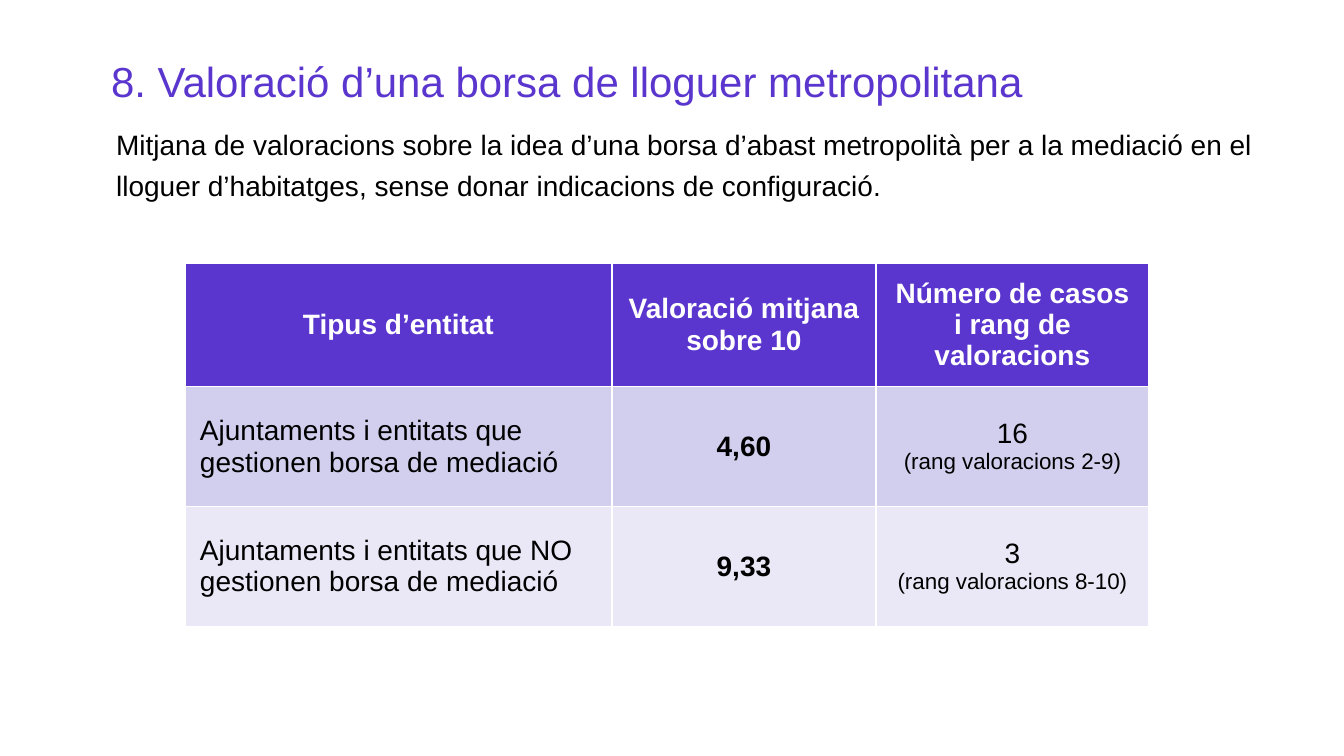
from pptx import Presentation
from pptx.dml.color import RGBColor
from pptx.enum.text import MSO_ANCHOR, MSO_AUTO_SIZE, PP_ALIGN
from pptx.oxml.ns import qn
from pptx.util import Pt

PX = 914400 / 100.8
COLORS = {"purple": "5A36CE", "lilac": "D2CEED", "pale": "EAE8F6",
          "white": "FFFFFF", "black": "000000"}


def px(length):
    return round(length * PX)


def add_text(paragraph, text, size, color, bold=False):
    run = paragraph.add_run()
    run.text = text
    run.font.name = "Arial"
    run.font.size = Pt(size)
    run.font.bold = bold
    run.font.color.rgb = RGBColor.from_string(COLORS[color])


prs = Presentation()
prs.slide_width, prs.slide_height = px(1344), px(756)
slide = prs.slides.add_slide(prs.slide_layouts[1])
title, intro = slide.placeholders

# Title and introduction
for holder, box, text, size, color, spacing in [
    (title, (101, 56, 959, 83), "8. Valoració d’una borsa de lloguer metropolitana",
     30, "purple", 0.9),
    (intro, (106, 116, 1162, 107),
     "Mitjana de valoracions sobre la idea d’una borsa d’abast metropolità per a la "
     "mediació en el lloguer d’habitatges, sense donar indicacions de configuració.",
     20, "black", 1.2),
]:
    holder.left, holder.top, holder.width, holder.height = map(px, box)
    frame = holder.text_frame
    frame.word_wrap = True
    frame.auto_size = MSO_AUTO_SIZE.NONE
    frame.vertical_anchor = MSO_ANCHOR.TOP
    paragraph = frame.paragraphs[0]
    paragraph.alignment = PP_ALIGN.LEFT
    paragraph.line_spacing = spacing
    paragraph.space_before = Pt(0)
    add_text(paragraph, text, size, color)

intro_props = intro.text_frame.paragraphs[0]._p.get_or_add_pPr()
intro_props.set("marL", "0")
intro_props.set("indent", "0")
intro_props.append(intro_props.makeelement(qn("a:buNone"), {}))

# Ratings table: each cell is a list of lines
ratings = [
    [["Tipus d’entitat"], ["Valoració mitjana sobre 10"],
     ["Número de casos i rang de valoracions"]],
    [["Ajuntaments i entitats que gestionen borsa de mediació"], ["4,60"],
     ["16", "(rang valoracions 2-9)"]],
    [["Ajuntaments i entitats que NO gestionen borsa de mediació"], ["9,33"],
     ["3", "(rang valoracions 8-10)"]],
]
row_fills = ["purple", "lilac", "pale"]
column_widths = [427, 264, 273]
row_height = 120

table = slide.shapes.add_table(3, 3, px(185), px(263), px(sum(column_widths)),
                               px(3 * row_height)).table
for column, width in zip(table.columns, column_widths):
    column.width = px(width)

for r, (entity, fill) in enumerate(zip(ratings, row_fills)):
    table.rows[r].height = px(row_height)
    for c, lines in enumerate(entity):
        cell = table.cell(r, c)
        cell.fill.solid()
        cell.fill.fore_color.rgb = RGBColor.from_string(COLORS[fill])
        cell.vertical_anchor = MSO_ANCHOR.MIDDLE
        cell.margin_left = cell.margin_right = px(15)
        cell.margin_top = cell.margin_bottom = px(15)
        for i, line in enumerate(lines):
            paragraph = cell.text_frame.add_paragraph() if i else cell.text_frame.paragraphs[0]
            paragraph.alignment = PP_ALIGN.LEFT if r and c == 0 else PP_ALIGN.CENTER
            add_text(paragraph, line, 16 if i else 20, "black" if r else "white",
                     bold=r == 0 or c == 1)

prs.save("out.pptx")
